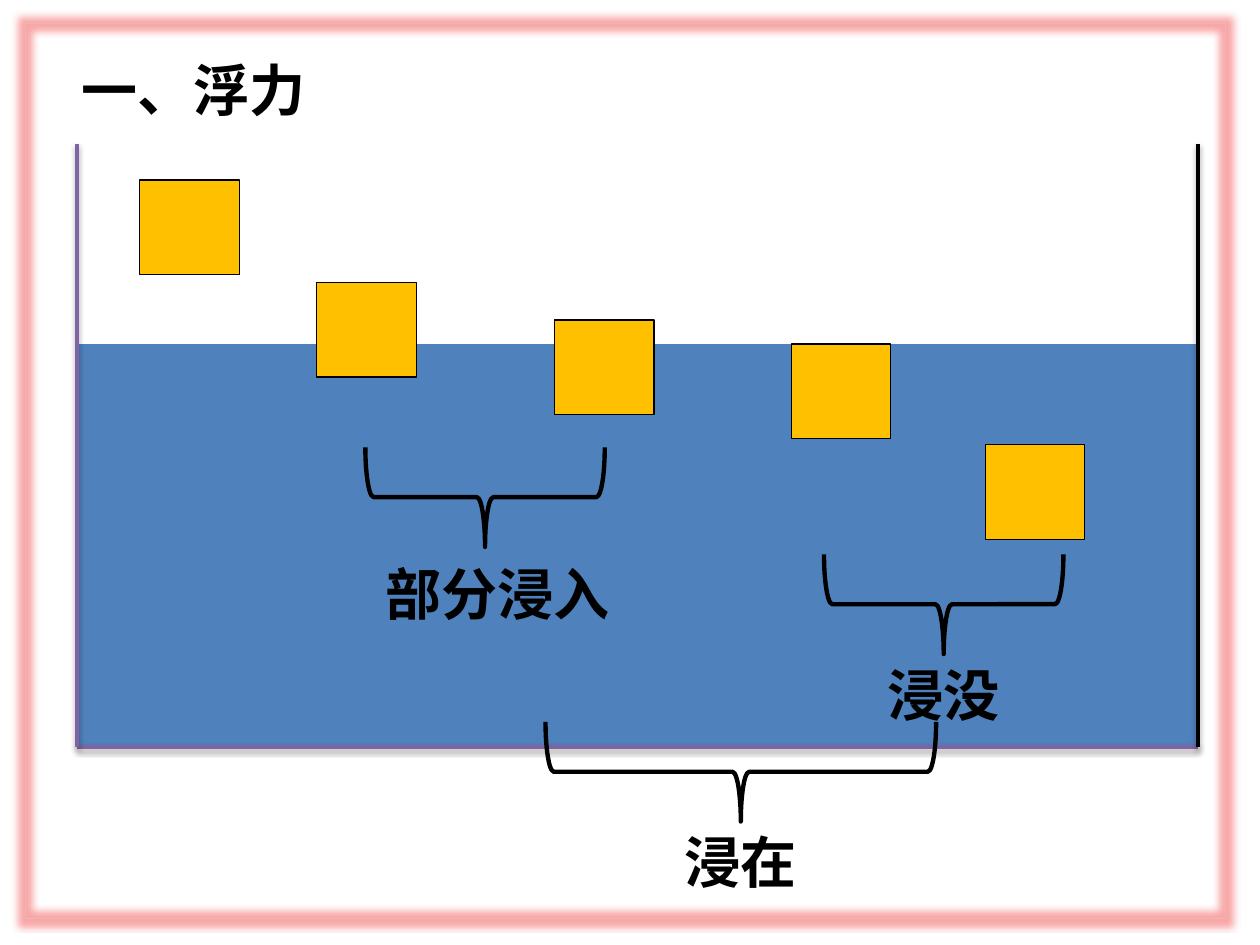
from lxml.etree import SubElement
from pptx import Presentation
from pptx.dml.color import RGBColor
from pptx.enum.shapes import MSO_CONNECTOR as Link, MSO_SHAPE as Kind
from pptx.enum.text import MSO_ANCHOR as Anchor, MSO_AUTO_SIZE as Fit, PP_ALIGN as Align
from pptx.oxml.ns import qn
from pptx.util import Inches, Pt

WIDE, HIGH = 10, 7.5
BLACK, WATER, EDGE, GOLD = "000000", "4F81BD", "8064A2", "FFC000"
BLOCK = (0.79, 0.75)


def color(text):
    return RGBColor.from_string(text)


def inch(*nums):
    return [Inches(n) for n in nums]


def effect(shape, kind, tint, alpha, **attrs):
    props = shape._element.spPr
    for old in props.findall(qn("a:effectLst")):
        props.remove(old)
    node = SubElement(SubElement(props, qn("a:effectLst")), qn("a:" + kind))
    for key, val in attrs.items():
        node.set(key, str(val))
    rgb = SubElement(node, qn("a:srgbClr"), val=tint)
    SubElement(rgb, qn("a:alpha"), val=str(alpha * 1000))


def shape(slide, kind, box, fill=None, line=None, size=0.75):
    item = slide.shapes.add_shape(kind, *inch(*box))
    item.shadow.inherit = False
    if fill:
        item.fill.solid()
        item.fill.fore_color.rgb = color(fill)
    else:
        item.fill.background()
    if line:
        item.line.color.rgb = color(line)
        item.line.width = Pt(size)
    else:
        item.line.fill.background()
    return item


def write(item, text):
    frame = item.text_frame
    frame.text = text
    para = frame.paragraphs[0]
    para.alignment = Align.CENTER
    font = para.runs[0].font
    font.name, font.size, font.bold = "Calibri", Pt(32), True
    font.color.rgb = color(BLACK)
    return frame


def title(slide, box, text):
    item = slide.shapes.title
    item.left, item.top, item.width, item.height = inch(*box)
    write(item, text).vertical_anchor = Anchor.MIDDLE


def wall(slide, start, end, tint):
    item = slide.shapes.add_connector(Link.STRAIGHT, *inch(*start, *end))
    item.line.color.rgb = color(tint)
    item.line.width = Pt(2.25)
    effect(item, "outerShdw", BLACK, 35, blurRad=Pt(3.1), dist=Pt(1.8), dir=5400000, rotWithShape=0)


def tank(slide, box, level, spots):
    left, top, width, height = box
    right, base = left + width, top + height
    line = top + height * level
    shape(slide, Kind.RECTANGLE, (left, line, width, base - line), WATER)
    wall(slide, (left, base), (right, base), EDGE)
    wall(slide, (left, base), (left, top), EDGE)
    wall(slide, (right, base), (right, top), BLACK)
    for col, row in spots:
        place = (left + width * col, top + height * row)
        shape(slide, Kind.RECTANGLE, place + BLOCK, GOLD, BLACK)


def group(slide, box, text, shift=0, gap=0):
    left, top, width, height = box
    mid, half = left + width / 2, top + height / 2
    turned = (mid - height / 2, half - width / 2, height, width)
    shape(slide, Kind.LEFT_BRACE, turned, None, BLACK, 2.5).rotation = 270
    span = 0.2 + 0.45 * len(text)
    place = (mid + shift - span / 2, top + height + gap, span, 0.64)
    frame = write(slide.shapes.add_textbox(*inch(*place)), text)
    frame.word_wrap = False
    frame.auto_size = Fit.SHAPE_TO_FIT_TEXT


def border(slide, box):
    item = shape(slide, Kind.FLOWCHART_PROCESS, box, None, "E6B9B8", 0.5)
    effect(item, "glow", "F9A6A6", 100, rad=Pt(8))


def main():
    deck = Presentation()
    deck.slide_width, deck.slide_height = inch(WIDE, HIGH)
    slide = deck.slides.add_slide(deck.slide_layouts[5])
    title(slide, (0.05 * WIDE, 0.044 * HIGH, 2.08, 0.1 * HIGH), "一、浮力")
    spots = [(0.056, 0.06), (0.214, 0.23), (0.426, 0.292), (0.637, 0.332), (0.81, 0.499)]
    tank(slide, (0.61, 1.14, 8.9, 4.79), 0.332, spots)
    group(slide, (2.9, 3.55, 1.9, 0.79), "部分浸入", 0.1, 0.05)
    group(slide, (6.54, 4.4, 1.9, 0.79), "浸没")
    group(slide, (4.33, 5.73, 3.1, 0.79), "浸在")
    border(slide, (0.2, 0.19, 9.53, 7.1))
    deck.save("out.pptx")


if __name__ == "__main__":
    main()
